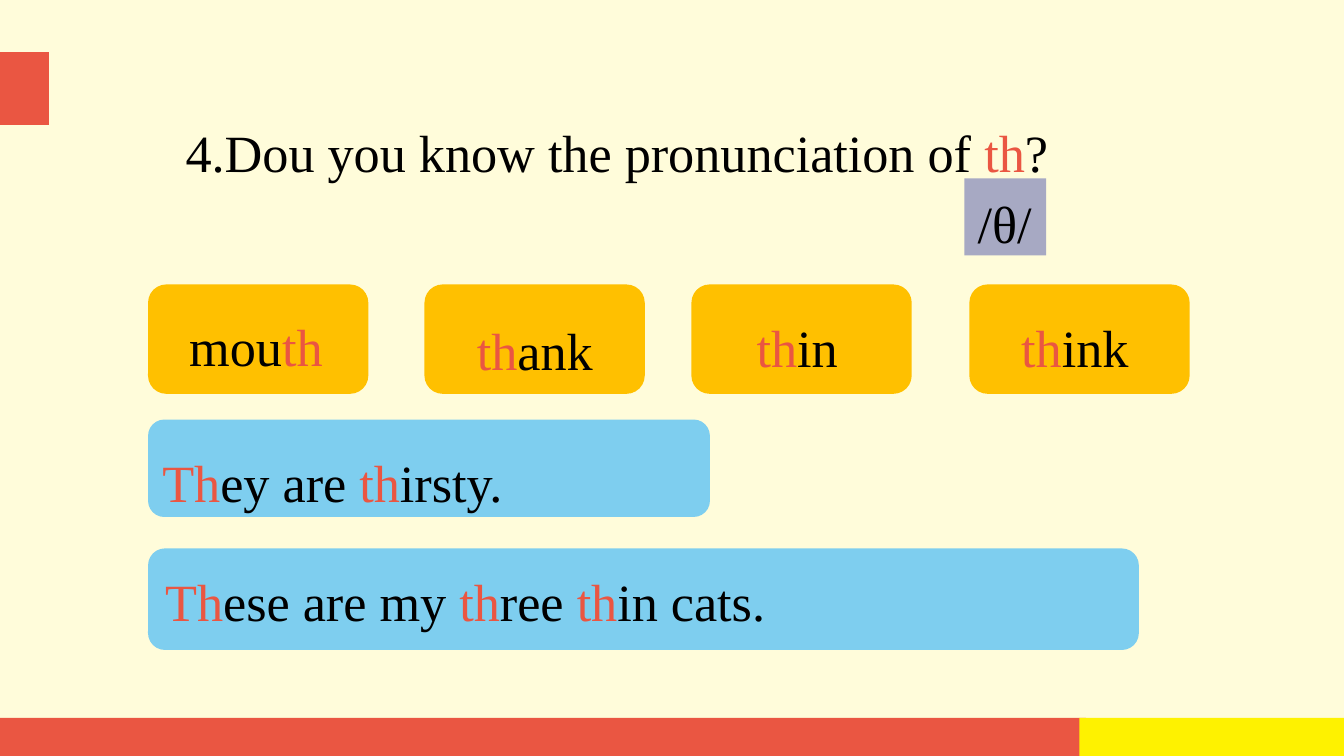
"""Build a pronunciation practice slide about the letters th."""
from pptx import Presentation
from pptx.dml.color import RGBColor
from pptx.enum.shapes import MSO_SHAPE
from pptx.enum.text import MSO_ANCHOR, MSO_AUTO_SIZE, PP_ALIGN
from pptx.util import Pt

RECTANGLE = MSO_SHAPE.RECTANGLE
ROUNDED = MSO_SHAPE.ROUNDED_RECTANGLE
TOP = MSO_ANCHOR.TOP
LEFT = PP_ALIGN.LEFT
FIXED_SIZE = MSO_AUTO_SIZE.NONE

TITLE_ONLY_LAYOUT = 5
FONT = "Times New Roman"
COLORS = {
    "cream": "FFFCDA",
    "red": "EA5642",
    "yellow": "FEF200",
    "amber": "FFC000",
    "blue": "7ECEEF",
    "lavender": "A7A9C3",
    "black": "000000",
}
DECORATIONS = [
    ("red", (0, 384.6, 581.8, 20.4)),
    ("yellow", (578.2, 384.6, 141.8, 20.4)),
    ("red", (0, 28, 26.2, 39)),
]
WORDS = [
    ("mou|th|", 79.3, (94.3, 161.3, 86.4, 31.7)),
    ("|th|ank", 227.4, (248.4, 163.4, 77, 31.7)),
    ("|th|in", 370.4, (398.2, 162, 58.3, 31.7)),
    ("|th|ink", 519.3, (540, 162, 72.7, 31.7)),
]
SENTENCES = [
    ("|Th|ey are |th|irsty.", (79.3, 224.8, 301, 52.2), (79.9, 234, 198.7, 41.2)),
    ("|Th|ese are my |th|ree |th|in cats.", (79.3, 293.8, 530.8, 54.4),
     (81.4, 298, 339.1, 41.2)),
]


def color(name):
    return RGBColor.from_string(COLORS[name])


def add_block(slide, kind, box, fill):
    shape = slide.shapes.add_shape(kind, *map(Pt, box))
    shape.shadow.inherit = False
    shape.fill.solid()
    shape.fill.fore_color.rgb = color(fill)
    shape.line.fill.background()
    return shape


def write_text(shape, marked_text, wrap=False):
    """Write one line in which the parts between bars are red."""
    frame = shape.text_frame
    frame.word_wrap = wrap
    frame.auto_size = FIXED_SIZE
    frame.vertical_anchor = TOP
    frame.margin_top = Pt(7)
    paragraph = frame.paragraphs[0]
    paragraph.alignment = LEFT
    paragraph.font.name = FONT
    paragraph.font.size = Pt(28)
    for index, part in enumerate(marked_text.split("|")):
        if part:
            run = paragraph.add_run()
            run.text = part
            run.font.color.rgb = color("red" if index % 2 else "black")


def add_label(slide, marked_text, box):
    write_text(slide.shapes.add_textbox(*map(Pt, box)), marked_text)


def add_title(slide, marked_text, box):
    title = slide.shapes.title
    title.left, title.top, title.width, title.height = map(Pt, box)
    write_text(title, marked_text, wrap=True)


def main():
    presentation = Presentation()
    presentation.slide_width, presentation.slide_height = Pt(720), Pt(405)
    layout = presentation.slide_layouts[TITLE_ONLY_LAYOUT]
    slide = presentation.slides.add_slide(layout)
    slide.background.fill.solid()
    slide.background.fill.fore_color.rgb = color("cream")

    for fill, box in DECORATIONS:
        add_block(slide, RECTANGLE, box, fill)
    add_title(slide, "4.Dou you know the pronunciation of |th|?",
              (92.2, 57.6, 527.8, 41.2))
    for word, left, label_box in WORDS:
        add_block(slide, ROUNDED, (left, 152.4, 118, 58.6), "amber")
        add_label(slide, word, label_box)
    sound = add_block(slide, RECTANGLE, (516.6, 95.6, 43.8, 41.2), "lavender")
    write_text(sound, "/θ/")
    for sentence, box, label_box in SENTENCES:
        add_block(slide, ROUNDED, box, "blue")
        add_label(slide, sentence, label_box)

    presentation.save("out.pptx")


if __name__ == "__main__":
    main()
